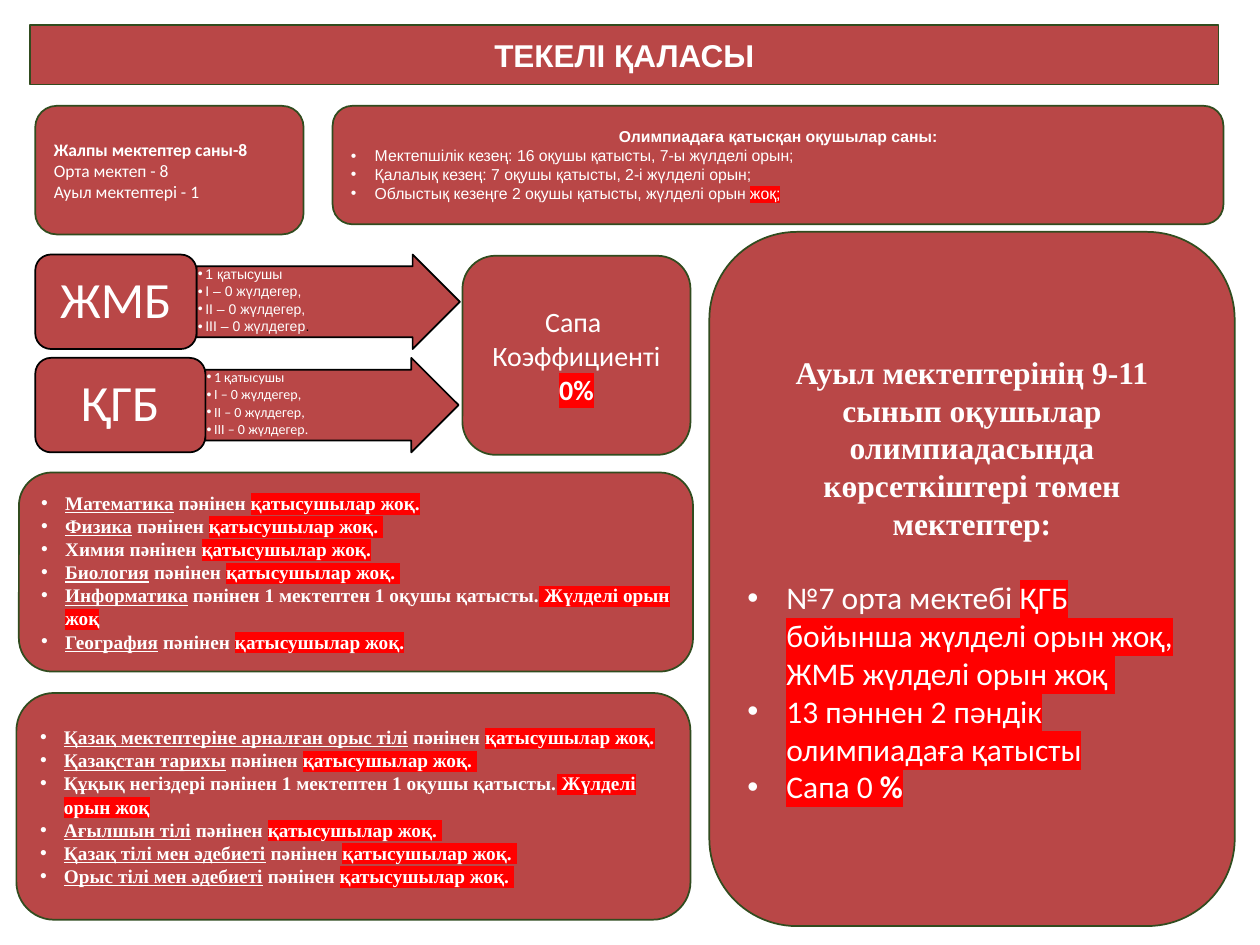
from lxml.etree import SubElement, Element
from pptx import Presentation
from pptx.dml.color import RGBColor
from pptx.enum.shapes import MSO_SHAPE
from pptx.enum.text import MSO_ANCHOR, MSO_AUTO_SIZE, PP_ALIGN
from pptx.oxml.ns import qn
from pptx.util import Inches, Pt

THEME = {
    "fill": RGBColor.from_string("B94747"),
    "edge": RGBColor.from_string("314C1F"),
    "dark": RGBColor.from_string("000000"),
    "text": RGBColor.from_string("FFFFFF"),
    "mark": "FF0000",
    "sans": "Arial", "body": "Calibri", "serif": "Times New Roman",
    "head": 18, "big": 29, "rate": 16, "list": 11, "note": 10, "fact": 9, "tiny": 8,
}
ROUND, ARROW = MSO_SHAPE.ROUNDED_RECTANGLE, MSO_SHAPE.RIGHT_ARROW
SOFT = MSO_SHAPE.FLOWCHART_ALTERNATE_PROCESS
LEFT, MID = PP_ALIGN.LEFT, PP_ALIGN.CENTER
NONE, ONE = " пәнінен ", " пәнінен 1 мектептен 1 оқушы қатысты."
GONE, LOST = "қатысушылар жоқ.", " Жүлделі орын жоқ"

TITLE = "ТЕКЕЛІ ҚАЛАСЫ"
SCHOOLS = [[("Жалпы мектептер саны-8", "b")], [("Орта мектеп - 8", "")],
           [("Ауыл мектептері - 1", "")]]
PUPILS = "Олимпиадаға қатысқан оқушылар саны:"
STAGES = [
    [("Мектепшілік кезең: 16 оқушы қатысты, 7-ы жүлделі орын;", "")],
    [("Қалалық кезең: 7 оқушы қатысты, 2-і жүлделі орын;", "")],
    [("Облыстық кезеңге 2 оқушы қатысты, жүлделі орын ", ""), ("жоқ;", "h")],
]
PRIZES = ["1 қатысушы", "І – 0 жүлдегер,", "ІІ – 0 жүлдегер,", "ІІІ – 0 жүлдегер"]
TEAMS = [
    ("ЖМБ", 2.02, 1.28, 3.65, "sans", "dark"),
    ("ҚГБ", 2.84, 1.35, 3.64, "body", "text"),
]
RATE = [[("Сапа ", "")], [("Коэффициенті", "")], [("0%", "bh")]]
TOPICS = [
    ((0.15, 3.75, 5.35, 1.58), [
        ("Математика", "bu", NONE, GONE),
        ("Физика", "bu", NONE, GONE + " "),
        ("Химия", "b", NONE, GONE),
        ("Биология", "bu", NONE, GONE + " "),
        ("Информатика", "bu", ONE, LOST),
        ("География", "bu", NONE, GONE),
    ]),
    ((0.13, 5.5, 5.35, 1.8), [
        ("Қазақ мектептеріне арналған орыс тілі", "bu", NONE, GONE),
        ("Қазақстан тарихы", "bu", NONE, GONE + " "),
        ("Құқық негіздері", "b", ONE, LOST),
        ("Ағылшын тілі", "bu", NONE, GONE + " "),
        ("Қазақ тілі мен әдебиеті", "bu", NONE, GONE + " "),
        ("Орыс тілі мен әдебиеті", "bu", NONE, GONE + " "),
    ]),
]
WEAK = ("Ауыл мектептерінің 9-11 сынып оқушылар олимпиадасында "
        "көрсеткіштері төмен мектептер:")
FACTS = [
    [("№7 орта мектебі ", ""),
     ("ҚГБ бойынша жүлделі орын жоқ, ЖМБ жүлделі орын жоқ ", "h")],
    [("13 пәннен 2 пәндік олимпиадаға қатысты", "h")],
    [("Сапа 0 ", "h"), ("%", "bh")],
]


def assign(item, values):
    for name, value in values.items():
        setattr(item, name, value)


def place(shape, box):
    names = ("left", "top", "width", "height")
    assign(shape, dict(zip(names, map(Inches, box))))


def paint(shape, edge="edge"):
    shape.fill.solid()
    shape.fill.fore_color.rgb = THEME["fill"]
    shape.line.color.rgb = THEME[edge]
    shape.line.width = Pt(1)


def panel(slide, kind, box, edge="edge"):
    shape = slide.shapes.add_shape(kind, *map(Inches, box))
    shape.shadow.inherit = False
    paint(shape, edge)
    return shape


def adapt(holder, box):
    place(holder, box)
    form = SubElement(holder.element.spPr, qn("a:prstGeom"), prst="roundRect")
    SubElement(form, qn("a:avLst"))
    paint(holder)
    return holder


def setup(shape, anchor=MSO_ANCHOR.MIDDLE, pad=(0.1, 0.05)):
    side, edge = map(Inches, pad)
    assign(shape.text_frame, {
        "word_wrap": True, "auto_size": MSO_AUTO_SIZE.NONE,
        "vertical_anchor": anchor, "margin_left": side, "margin_right": side,
        "margin_top": edge, "margin_bottom": edge})


def write(shape, rows, font, size, align=LEFT, hang=0, line=1.0, after=0):
    frame = shape.text_frame
    for runs in rows:
        para = frame.paragraphs[0]
        if para.runs:
            para = frame.add_paragraph()
        assign(para, {"alignment": align, "line_spacing": line,
                      "space_before": Pt(0), "space_after": Pt(after)})
        if hang:
            props = para._p.get_or_add_pPr()
            props.set("marL", str(Inches(hang)))
            props.set("indent", str(-Inches(hang)))
            SubElement(props, qn("a:buFont"), typeface=THEME["sans"])
            SubElement(props, qn("a:buChar"), char="•")
        for text, flags, *tint in runs:
            run = para.add_run()
            run.text = text
            assign(run.font, {"name": THEME[font], "size": Pt(THEME[size]),
                              "bold": "b" in flags, "underline": "u" in flags})
            run.font.color.rgb = THEME[tint[0] if tint else "text"]
            if "h" in flags:
                mark = Element(qn("a:highlight"))
                SubElement(mark, qn("a:srgbClr"), val=THEME["mark"])
                run.font._element.find(qn("a:solidFill")).addnext(mark)
    return para


def team(slide, name, top, wide, end, font, dot):
    left, high = 0.28, 0.75
    start = left + wide
    arrow = panel(slide, ARROW, (start, top, end - start, high), "dark")
    arrow.adjustments[0], arrow.adjustments[1] = 0.75, 0.5
    note = slide.shapes.add_textbox(
        *map(Inches, (start, top + 0.09, end - start - 0.28, 0.56)))
    setup(note, MSO_ANCHOR.TOP, (0.01, 0.01))
    rows = [[(text, "")] for text in PRIZES]
    rows[-1].append((".", "", dot))
    write(note, rows, font, "tiny", hang=0.06, line=0.9, after=1.4)
    label = panel(slide, ROUND, (left, top, wide, high), "dark")
    setup(label, pad=(0.05, 0.05))
    write(label, [[(name, "")]], "body", "big", MID, line=0.9)


def main():
    deck = Presentation()
    deck.slide_width, deck.slide_height = Inches(10), Inches(7.5)
    slide = deck.slides.add_slide(deck.slide_layouts[3])
    title, *lists = list(slide.placeholders)[:3]

    adapt(title, (0.24, 0.2, 9.43, 0.47))
    setup(title)
    write(title, [[(TITLE, "b")]], "sans", "head", MID)

    for holder, (box, topics) in zip(lists, TOPICS):
        adapt(holder, box)
        setup(holder)
        rows = [[(name, style), (link, "b"), (result, "bh")]
                for name, style, link, result in topics]
        write(holder, rows, "serif", "list", hang=0.19)

    school = panel(slide, ROUND, (0.28, 0.84, 2.13, 1.02))
    setup(school)
    write(school, SCHOOLS, "body", "note")

    stage = panel(slide, ROUND, (2.64, 0.84, 7.07, 0.94))
    setup(stage)
    write(stage, [[(PUPILS, "b")]], "sans", "fact", MID)
    write(stage, STAGES, "sans", "fact", hang=0.19)

    for item in TEAMS:
        team(slide, *item)

    rate = panel(slide, SOFT, (3.67, 2.03, 1.81, 1.58))
    setup(rate)
    write(rate, RATE, "body", "rate", MID)

    weak = panel(slide, SOFT, (5.63, 1.84, 4.17, 5.51))
    setup(weak)
    write(weak, [[(WEAK, "b")]], "serif", "head", MID, after=21)
    write(weak, FACTS, "body", "head", hang=0.31)

    deck.save("out.pptx")


if __name__ == "__main__":
    main()
